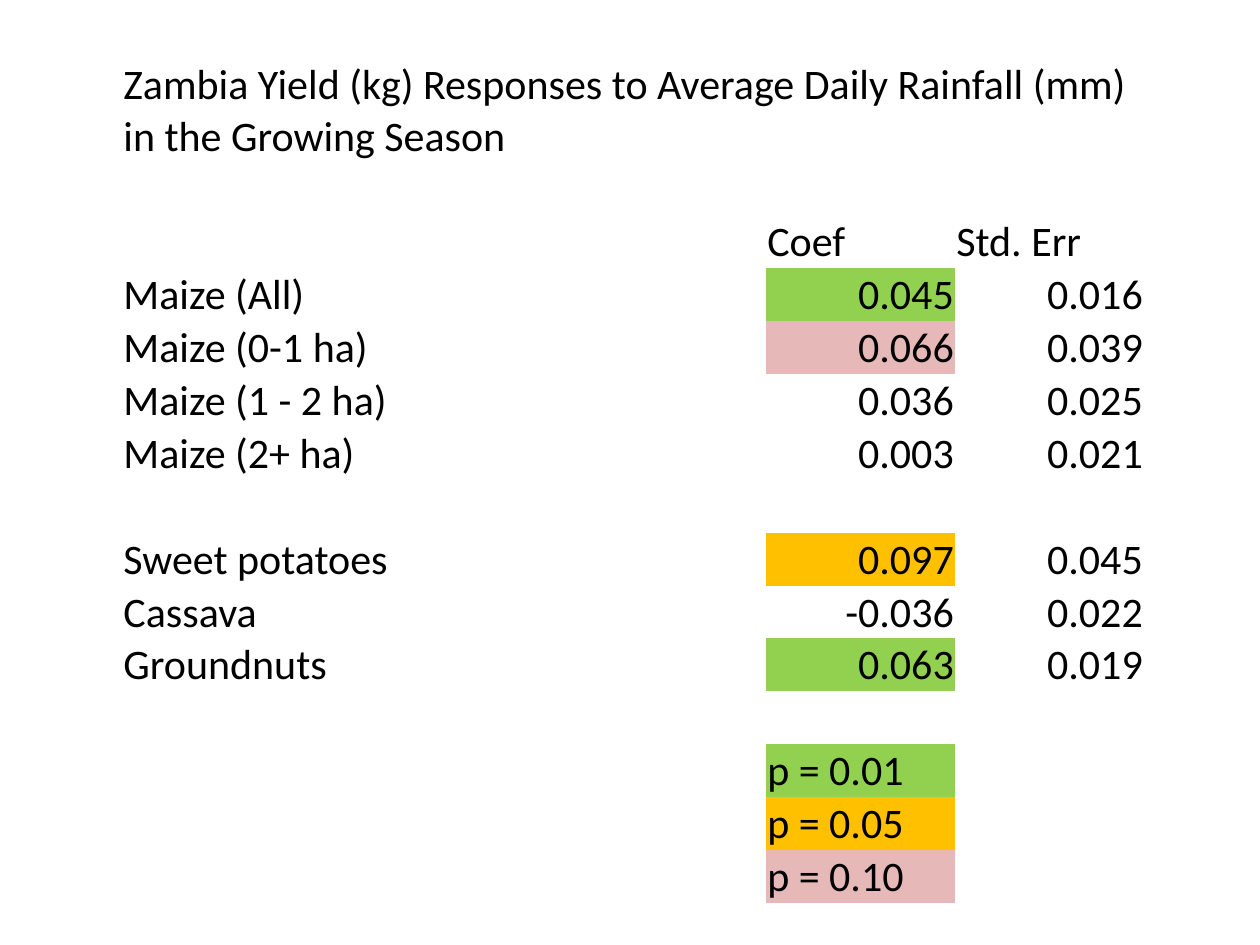
from dataclasses import dataclass

from pptx import Presentation
from pptx.dml.color import RGBColor
from pptx.enum.text import MSO_ANCHOR, PP_ALIGN
from pptx.oxml.ns import qn
from pptx.util import Inches, Pt


@dataclass(frozen=True)
class Theme:
    font: str = "Calibri"
    size: Pt = Pt(24)
    text: RGBColor = RGBColor(0, 0, 0)
    p01: RGBColor = RGBColor(0x92, 0xD0, 0x50)
    p05: RGBColor = RGBColor(0xFF, 0xC0, 0x00)
    p10: RGBColor = RGBColor(0xE6, 0xB8, 0xB7)


THEME = Theme()
NO_GRID_STYLE = "{2D5ABB26-0587-4C30-8999-92F81FD0307C}"
TITLE = "Zambia Yield (kg) Responses to Average Daily Rainfall (mm) in the Growing Season"
BLANK = ("", "", "", None)
ROWS = [
    (TITLE, "", "", None),
    BLANK,
    ("", "Coef", "Std. Err", None),
    ("Maize (All)", "0.045", "0.016", THEME.p01),
    ("Maize (0-1 ha)", "0.066", "0.039", THEME.p10),
    ("Maize (1 - 2 ha)", "0.036", "0.025", None),
    ("Maize (2+ ha)", "0.003", "0.021", None),
    BLANK,
    ("Sweet potatoes", "0.097", "0.045", THEME.p05),
    ("Cassava", "-0.036", "0.022", None),
    ("Groundnuts", "0.063", "0.019", THEME.p01),
    BLANK,
    ("", "p = 0.01", "", THEME.p01),
    ("", "p = 0.05", "", THEME.p05),
    ("", "p = 0.10", "", THEME.p10),
]
COL_WIDTHS = [5.11, 1.5, 1.5]
TITLE_HEIGHT, ROW_HEIGHT = 0.84, 0.42


def fill_cell(cell, text, align, color=None):
    cell.margin_left = cell.margin_right = cell.margin_top = Inches(0.01)
    cell.margin_bottom = 0
    cell.vertical_anchor = MSO_ANCHOR.BOTTOM
    if color is None:
        cell.fill.background()
    else:
        cell.fill.solid()
        cell.fill.fore_color.rgb = color
    p = cell.text_frame.paragraphs[0]
    p.text = text
    p.alignment = align
    p.font.name = THEME.font
    p.font.size = THEME.size
    p.font.color.rgb = THEME.text


def add_yield_table(s):
    height = TITLE_HEIGHT + ROW_HEIGHT * (len(ROWS) - 1)
    table = s.shapes.add_table(
        len(ROWS), len(COL_WIDTHS), Inches(0.97), Inches(0.45),
        Inches(sum(COL_WIDTHS)), Inches(height),
    ).table
    table.first_row = table.horz_banding = False
    table._tbl.tblPr.find(qn("a:tableStyleId")).text = NO_GRID_STYLE
    for column, width in zip(table.columns, COL_WIDTHS):
        column.width = Inches(width)
    for i, (*texts, color) in enumerate(ROWS):
        table.rows[i].height = Inches(ROW_HEIGHT if i else TITLE_HEIGHT)
        for j, text in enumerate(texts):
            is_number = text.lstrip("-")[:1].isdigit()
            align = PP_ALIGN.RIGHT if is_number else PP_ALIGN.LEFT
            fill_cell(table.cell(i, j), text, align, color if j == 1 else None)
    table.cell(0, 0).merge(table.cell(0, 2))


def main():
    prs = Presentation()
    prs.slide_width, prs.slide_height = Inches(10), Inches(7.5)
    s = prs.slides.add_slide(prs.slide_layouts[6])
    add_yield_table(s)
    prs.save("out.pptx")


if __name__ == "__main__":
    main()
